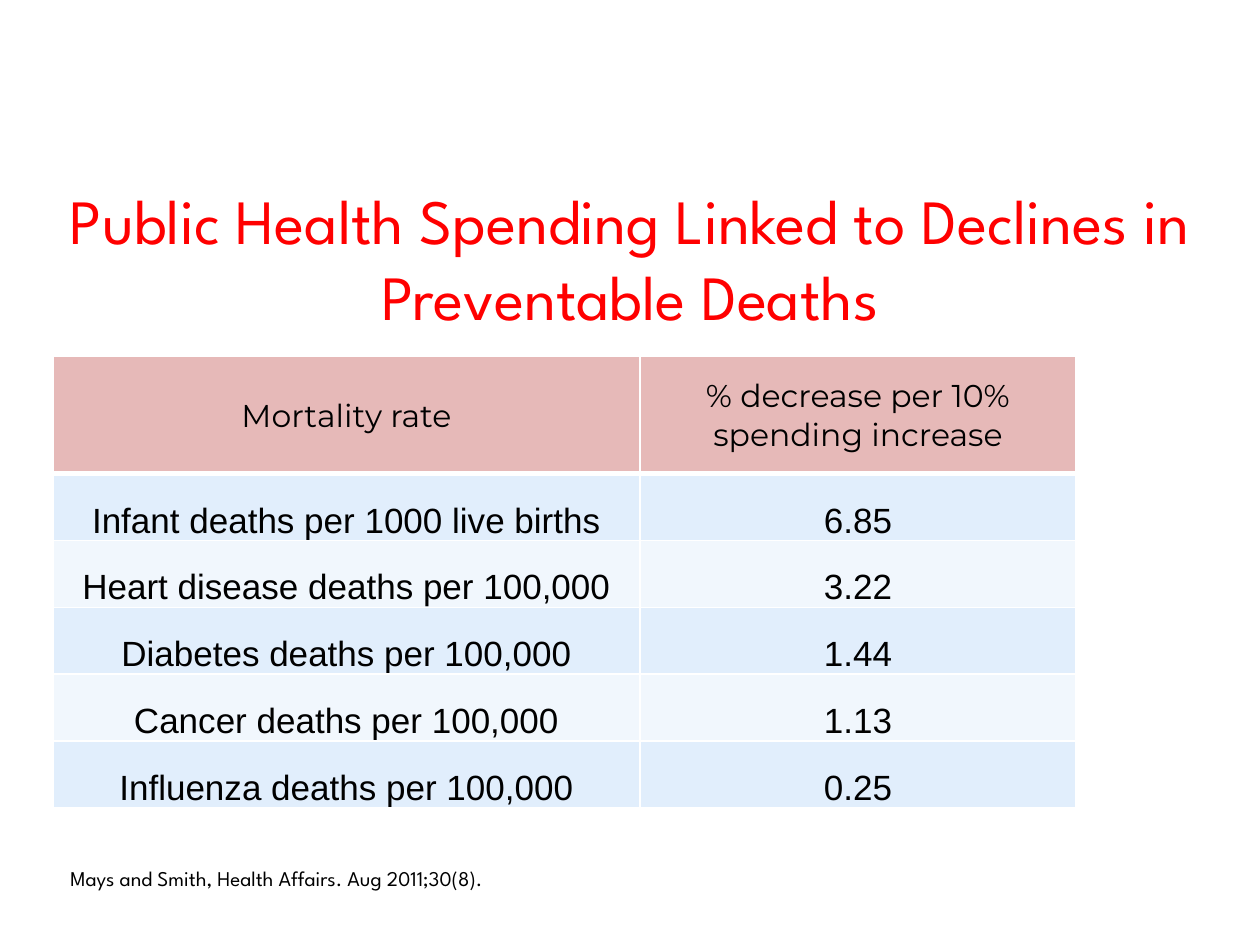
from lxml import etree
from pptx import Presentation
from pptx.dml.color import RGBColor
from pptx.enum import text
from pptx.oxml import ns
from pptx.util import Inches, Pt

RED = RGBColor(0xFF, 0, 0)
BLACK = RGBColor(0, 0, 0)
WHITE = RGBColor(0xFF, 0xFF, 0xFF)
ROSE = RGBColor(0xE6, 0xB9, 0xB8)
BLUE = RGBColor(0xE1, 0xEE, 0xFC)
PALE = RGBColor(0xF1, 0xF7, 0xFD)


def style(para, face, size, tint):
    for run in para.runs:
        run.font.name = face
        run.font.size = Pt(size)
        run.font.color.rgb = tint


def border(cell, side, width):
    props = cell._tc.get_or_add_tcPr()
    line = etree.SubElement(props, ns.qn("a:" + side), w=str(Pt(width)))
    fill = etree.SubElement(line, ns.qn("a:solidFill"))
    etree.SubElement(fill, ns.qn("a:srgbClr"), val=str(WHITE))


deck = Presentation()
deck.slide_width = Inches(10)
deck.slide_height = Inches(7.5)
slide = deck.slides.add_slide(deck.slide_layouts[6])

title = slide.shapes.add_textbox(Inches(0), Inches(1.44), Inches(10), Inches(1.2))
frame = title.text_frame
frame.word_wrap = True
frame.margin_top = frame.margin_bottom = 0
frame.text = "Public Health Spending Linked to Declines in Preventable Deaths"
frame.paragraphs[0].alignment = text.PP_ALIGN.CENTER
style(frame.paragraphs[0], "League Spartan", 36, RED)

rates = [
    ("Mortality rate", "% decrease per 10% spending increase"),
    ("Infant deaths per 1000 live births", "6.85"),
    ("Heart disease deaths per 100,000", "3.22"),
    ("Diabetes deaths per 100,000", "1.44"),
    ("Cancer deaths per 100,000", "1.13"),
    ("Influenza deaths per 100,000", "0.25"),
]
table = slide.shapes.add_table(
    len(rates), 2, Inches(0.42), Inches(2.83), Inches(8.12), Inches(3.57)
).table
table.columns[0].width = Inches(4.66)
table.columns[1].width = Inches(3.46)

for r, pair in enumerate(rates):
    head = r == 0
    table.rows[r].height = Inches(0.93 if head else 0.53)
    for c, words in enumerate(pair):
        cell = table.cell(r, c)
        cell.text = words
        cell.margin_left = cell.margin_right = cell.margin_top = Inches(0.01)
        cell.margin_bottom = 0
        cell.vertical_anchor = text.MSO_ANCHOR.MIDDLE if head else text.MSO_ANCHOR.BOTTOM
        para = cell.text_frame.paragraphs[0]
        para.alignment = text.PP_ALIGN.CENTER
        style(para, "Montserrat" if head else "Arial", 18 if head else 20, BLACK)
        border(cell, "lnL", 1)
        border(cell, "lnR", 1)
        border(cell, "lnT", 3 if r == 1 else 1)
        border(cell, "lnB", 3 if head else 1)
        cell.fill.solid()
        cell.fill.fore_color.rgb = ROSE if head else BLUE if r % 2 else PALE

source = slide.shapes.add_textbox(Inches(0.46), Inches(6.82), Inches(4.01), Inches(0.3))
source.text_frame.word_wrap = True
source.text_frame.text = "Mays and Smith, Health Affairs. Aug 2011;30(8)."
style(source.text_frame.paragraphs[0], "League Spartan", 12, BLACK)

deck.save("out.pptx")
